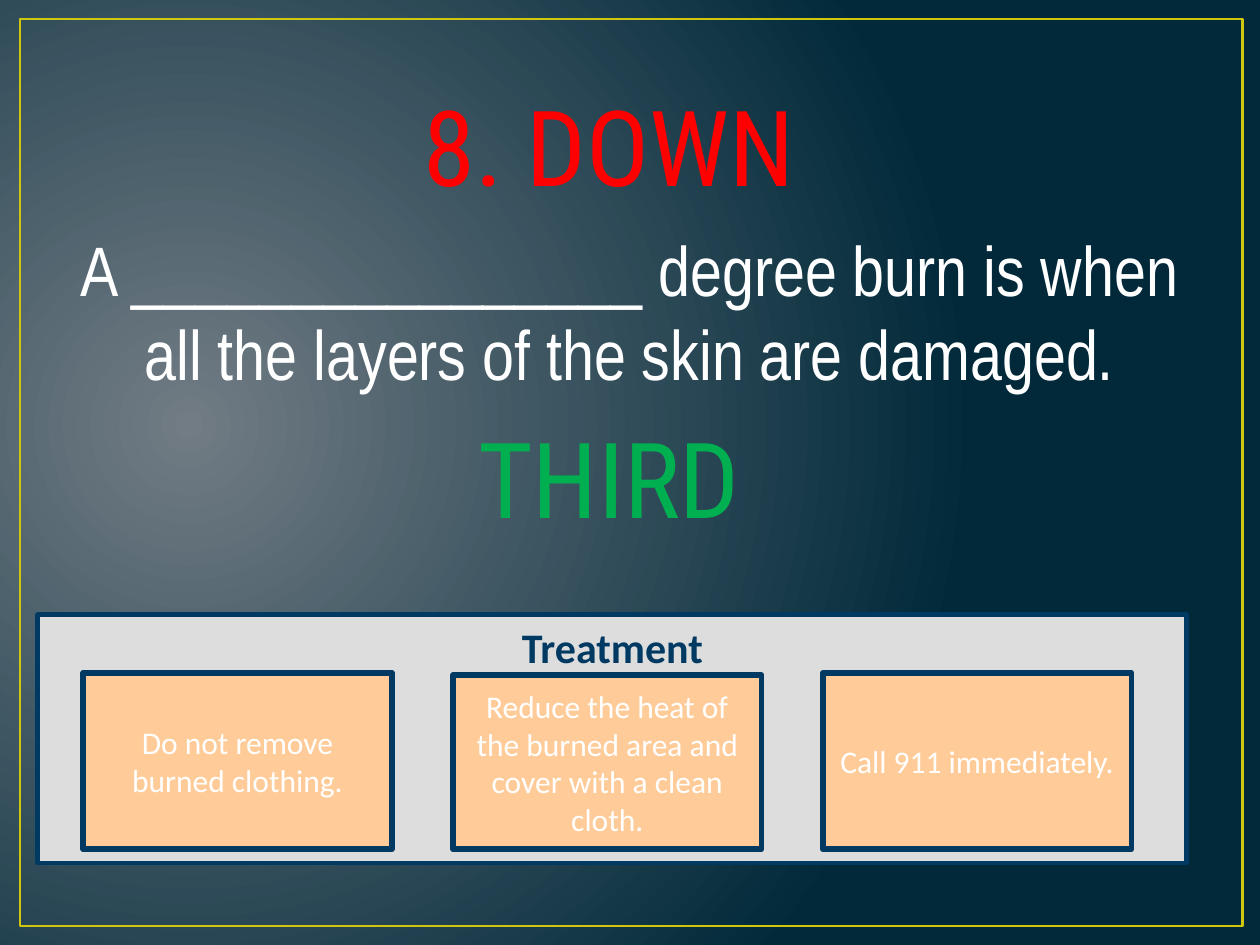
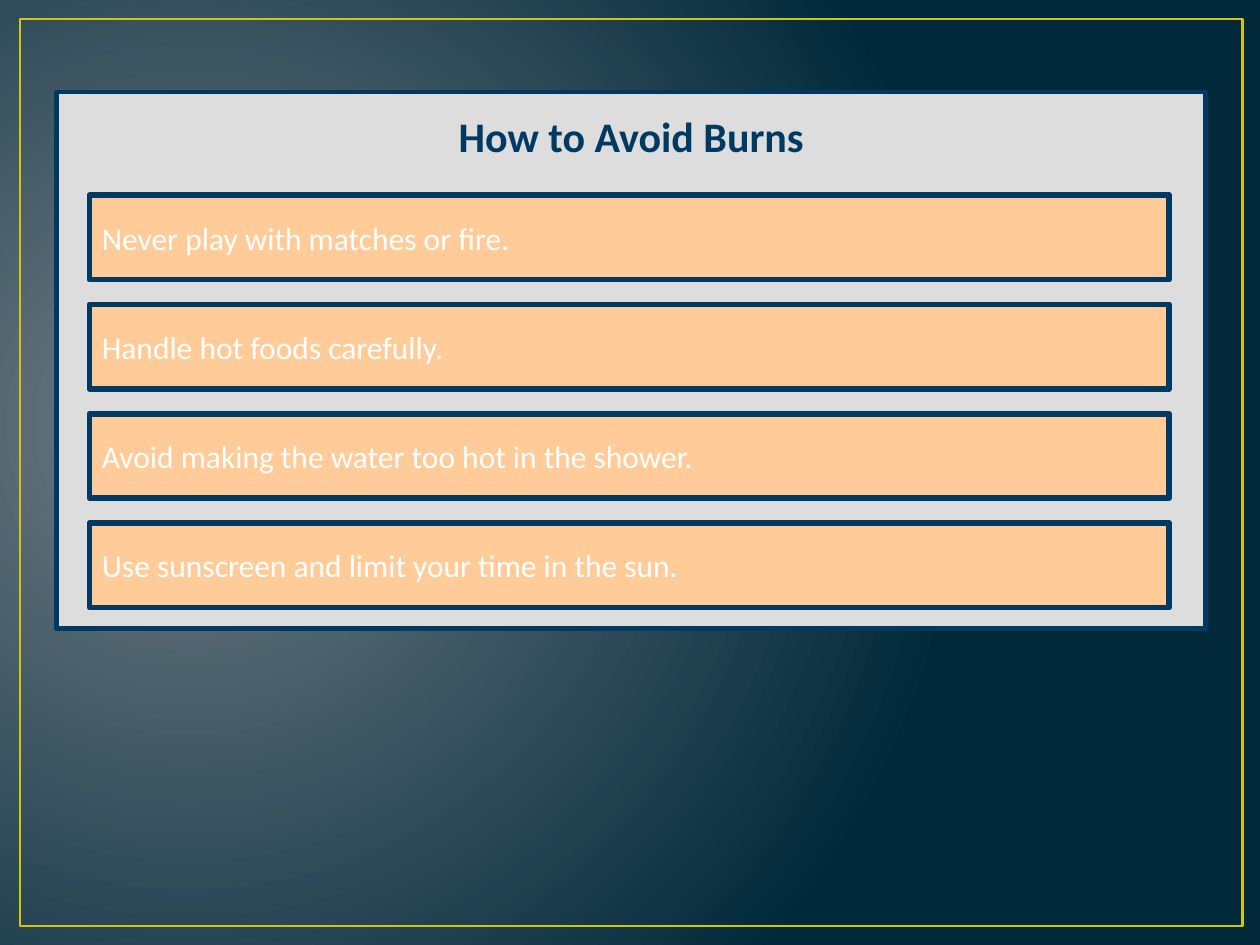
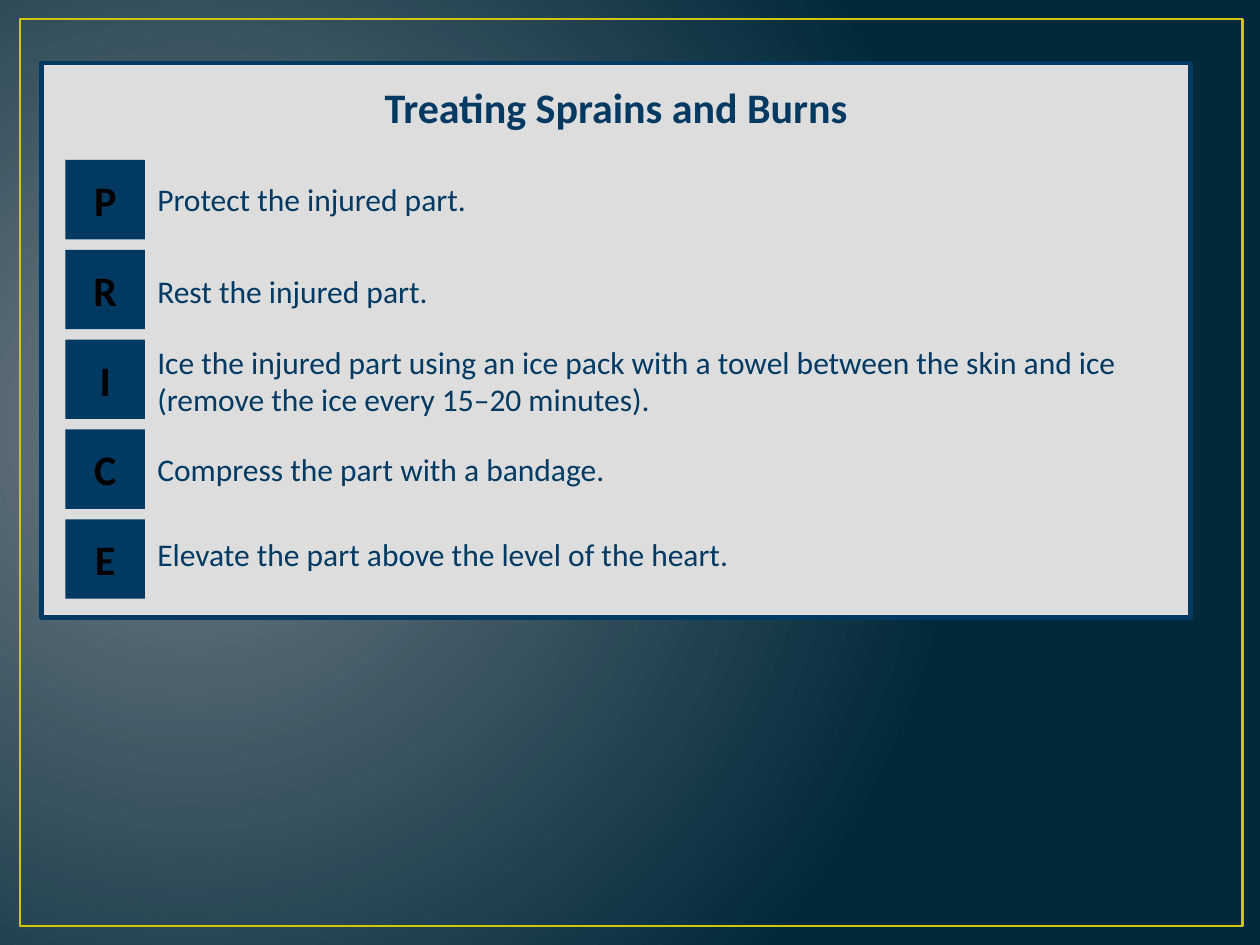
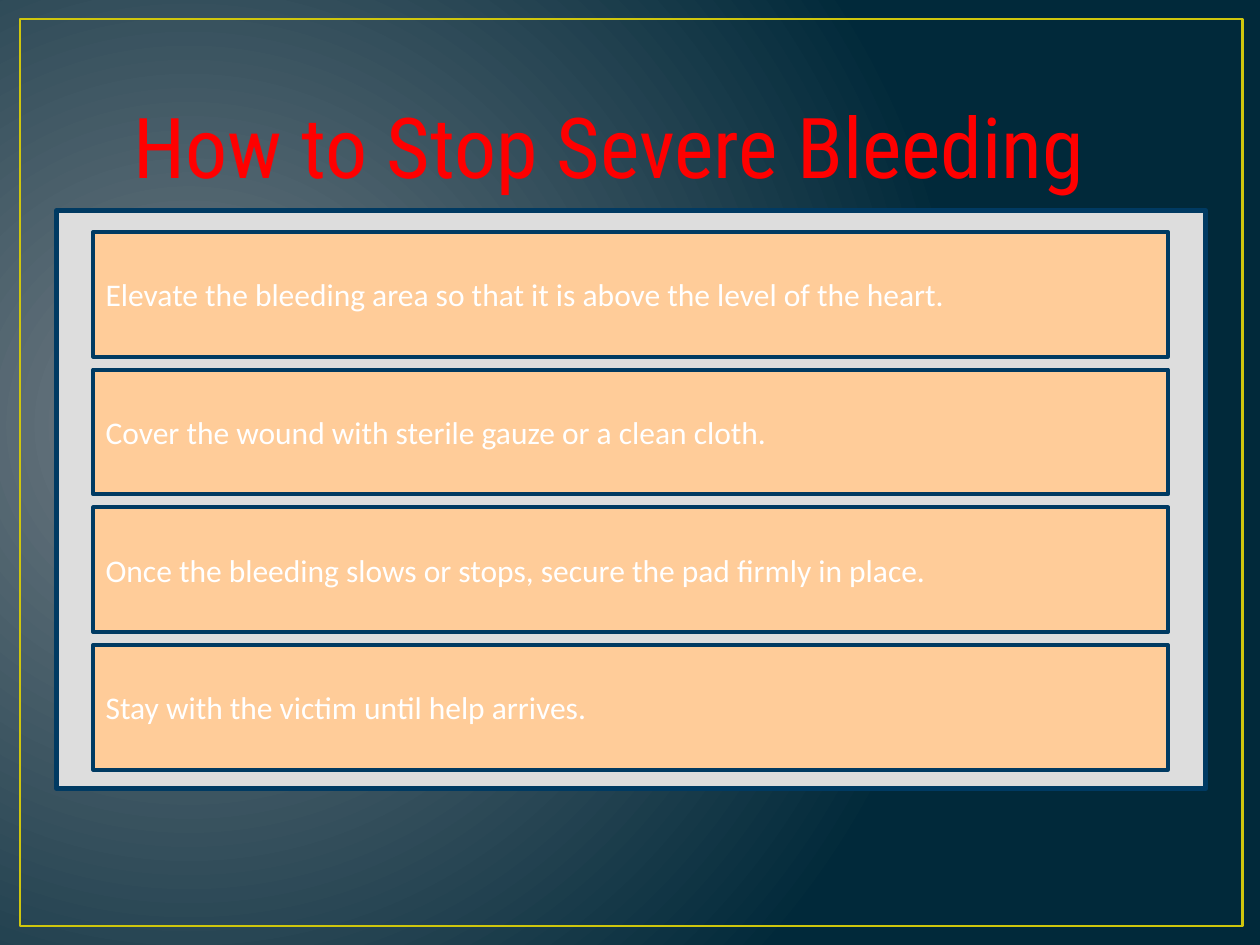
from lxml.etree import SubElement
from pptx import Presentation
from pptx.dml.color import RGBColor
from pptx.enum.shapes import MSO_SHAPE
from pptx.enum.text import MSO_ANCHOR, MSO_AUTO_SIZE, PP_ALIGN
from pptx.oxml.ns import qn
from pptx.util import Inches, Pt

GLOW = RGBColor(0x71, 0x7C, 0x84)
DEEP_BLUE = RGBColor(0x01, 0x29, 0x3A)
GOLD = RGBColor(0xCF, 0xC6, 0x0D)
NAVY = RGBColor(0x00, 0x3A, 0x62)
GRAY = RGBColor(0xDD, 0xDD, 0xDD)
PEACH = RGBColor(0xFF, 0xCC, 0x99)
RED = RGBColor(0xFF, 0x00, 0x00)
GREEN = RGBColor(0x00, 0xB0, 0x50)
WHITE = RGBColor(0xFF, 0xFF, 0xFF)
BLACK = RGBColor(0x00, 0x00, 0x00)

COLUMNS, ROWS = 100, 75
TITLE_AND_BODY, TITLE_ONLY, BLANK = 1, 5, 6
TITLE_AREA = (4.6, 5.9, 87.5, 11.2)
ANSWER_AREA = (4.6, 32.2, 87.5, 11.2)

DISPLAY = {"name": "Roboto Condensed", "size": Pt(60)}
CLUE = {"name": "Arial Narrow", "size": Pt(40)}
HEADING = {"name": "Calibri", "size": Pt(24), "bold": True}
TEXT = {"name": "Calibri", "size": Pt(18)}


def assign(target, values):
    """Set each named attribute of the target."""
    for name, value in values.items():
        setattr(target, name, value)


class Deck:
    """Holds the shared style and the current slide."""

    def __init__(self):
        """Open a presentation with the glowing background."""
        self.presentation = Presentation()
        assign(self.presentation, {"slide_width": Inches(10), "slide_height": Inches(7.5)})
        self.master = self.presentation.slide_master
        self.slide = None
        self.paint_background()

    def paint_background(self):
        """Give the master its circular gradient."""
        fill = self.master.background.fill
        fill.gradient()
        for stop, color in zip(fill.gradient_stops, (GLOW, DEEP_BLUE)):
            stop.color.rgb = color
        gradient = self.master.element.find(".//" + qn("a:gradFill"))
        gradient.remove(gradient.find(qn("a:lin")))
        circle = SubElement(gradient, qn("a:path"), {"path": "circle"})
        SubElement(circle, qn("a:fillToRect"),
                   {"l": "15000", "t": "50000", "r": "85000", "b": "60000"})

    def add_frame(self):
        """Put the gold frame on the master."""
        frame = self.box((1.6, 1.5, 97, 72), None, GOLD, 1.5)
        frame.element.nvSpPr.cNvPr.set("id", "99")
        self.master.shapes.element.append(frame.element)

    def new_slide(self, layout):
        """Start a slide, framing the master the first time."""
        self.slide = self.presentation.slides.add_slide(
            self.presentation.slide_layouts[layout])
        if len(self.presentation.slides) == 1:
            self.add_frame()

    def place(self, area):
        """Turn columns and rows into left, top, width and height."""
        column = self.presentation.slide_width / COLUMNS
        row = self.presentation.slide_height / ROWS
        return [round(length * unit) for length, unit in zip(area, (column, row) * 2)]

    def set_text(self, shape, text, font, color, align=PP_ALIGN.LEFT, **frame_values):
        """Fill a shape with one formatted paragraph."""
        frame = shape.text_frame
        frame.text = text
        assign(frame, {"word_wrap": True, **frame_values})
        paragraph = frame.paragraphs[0]
        paragraph.alignment = align
        run = paragraph.runs[0]
        assign(run.font, font)
        run.font.color.rgb = color
        return paragraph

    def move(self, shape, area):
        """Move a placeholder to an area of the grid."""
        assign(shape, dict(zip(("left", "top", "width", "height"), self.place(area))))

    def title(self, text, size):
        """Fill the title placeholder."""
        shape = self.slide.shapes.title
        self.move(shape, TITLE_AREA)
        self.set_text(shape, text, {**DISPLAY, "size": Pt(size)}, RED, PP_ALIGN.CENTER,
                      vertical_anchor=MSO_ANCHOR.MIDDLE)

    def body(self, text, area):
        """Fill the body placeholder with an unbulleted clue."""
        shape = self.slide.placeholders[1]
        self.move(shape, area)
        paragraph = self.set_text(shape, text, CLUE, WHITE, PP_ALIGN.CENTER,
                                  auto_size=MSO_AUTO_SIZE.SHAPE_TO_FIT_TEXT)
        assign(paragraph, {"level": 1, "space_before": Pt(0)})
        properties = paragraph._p.get_or_add_pPr()
        properties.set("marL", str(Inches(0.5)))
        properties.set("indent", "0")
        SubElement(properties, qn("a:buNone"))

    def label(self, text, area, font, color, align=PP_ALIGN.LEFT, **frame_values):
        """Add a text box."""
        shape = self.slide.shapes.add_textbox(*self.place(area))
        self.set_text(shape, text, font, color, align, **frame_values)

    def box(self, area, fill, line=None, line_width=0):
        """Add a plain rectangle."""
        shape = self.slide.shapes.add_shape(MSO_SHAPE.RECTANGLE, *self.place(area))
        shape.shadow.inherit = False
        for paint, color in ((shape.fill, fill), (shape.line.fill, line)):
            if color is None:
                paint.background()
            else:
                paint.solid()
                paint.fore_color.rgb = color
        if line is not None:
            shape.line.width = Pt(line_width)
        return shape

    def panel(self, area, heading=None, inset=0.15):
        """Add a gray panel with an optional heading at its top."""
        shape = self.box(area, GRAY, NAVY, 2.75)
        if heading:
            self.set_text(shape, heading, HEADING, NAVY, PP_ALIGN.CENTER,
                          vertical_anchor=MSO_ANCHOR.TOP, margin_top=Inches(inset))

    def card(self, text, area, line_width=3.25, align=PP_ALIGN.LEFT):
        """Add a peach card with white text."""
        shape = self.box(area, PEACH, NAVY, line_width)
        self.set_text(shape, text, TEXT, WHITE, align, vertical_anchor=MSO_ANCHOR.MIDDLE)

    def card_column(self, texts, first_area, pitch, line_width):
        """Stack cards at an equal pitch."""
        left, top, width, height = first_area
        for index, text in enumerate(texts):
            self.card(text, (left, top + index * pitch, width, height), line_width)

    def letter(self, text, area):
        """Add a navy square with a bold letter."""
        shape = self.box(area, NAVY)
        self.set_text(shape, text, HEADING, BLACK, PP_ALIGN.CENTER,
                      vertical_anchor=MSO_ANCHOR.MIDDLE)


def add_third_degree_burn(deck):
    """Build the crossword clue with its answer and treatment."""
    deck.new_slide(TITLE_AND_BODY)
    deck.title("8. DOWN", 60)
    deck.body("A ________________ degree burn is when all the layers of the skin are damaged.",
              (-0.7, 17.5, 96.3, 14.5))
    deck.label("THIRD", ANSWER_AREA, DISPLAY, GREEN, PP_ALIGN.CENTER,
               vertical_anchor=MSO_ANCHOR.MIDDLE)
    deck.panel((3, 48.8, 91.2, 19.7), "Treatment", 0.05)
    bottom = 67.4
    treatments = (
        ("Do not remove burned clothing.", 53.4),
        ("Reduce the heat of the burned area and cover with a clean cloth.", 53.6),
        ("Call 911 immediately.", 53.4),
    )
    for index, (text, top) in enumerate(treatments):
        deck.card(text, (6.6 + index * 29.35, top, 24.5, bottom - top), align=PP_ALIGN.CENTER)


def add_avoiding_burns(deck):
    """Build the list of ways to avoid burns."""
    deck.new_slide(BLANK)
    deck.panel((4.5, 7.3, 91.2, 42.6), "How to Avoid Burns")
    deck.card_column((
        "Never play with matches or fire.",
        "Handle hot foods carefully.",
        "Avoid making the water too hot in the shower.",
        "Use sunscreen and limit your time in the sun.",
    ), (7.1, 15.5, 85.7, 6.7), 8.67, 3.25)


def add_price_steps(deck):
    """Build the five lettered treatment steps."""
    deck.new_slide(BLANK)
    deck.panel((3.3, 5, 91.2, 44), "Treating Sprains and Burns")
    steps = (
        ("Protect the injured part.", 13.8, 28, 4),
        ("Rest the injured part.", 21.1, 25.2, 4),
        ("Ice the injured part using an ice pack with a towel between the skin and ice "
         "(remove the ice every 15–20 minutes).", 26.7, 78.8, 7),
        ("Compress the part with a bandage.", 35.2, 78.8, 4),
        ("Elevate the part above the level of the heart.", 42, 78.8, 4),
    )
    for index, (text, top, width, height) in enumerate(steps):
        deck.letter(text[0], (5.2, 12.7 + index * 7.13, 6.3, 6.3))
        deck.label(text, (11.5, top, width, height), TEXT, NAVY,
                   auto_size=MSO_AUTO_SIZE.SHAPE_TO_FIT_TEXT)


def add_stopping_bleeding(deck):
    """Build the steps that stop severe bleeding."""
    deck.new_slide(TITLE_ONLY)
    deck.title("How to Stop Severe Bleeding", 48)
    deck.panel((4.5, 16.7, 91.2, 45.9))
    deck.card_column((
        "Elevate the bleeding area so that it is above the level of the heart.",
        "Cover the wound with sterile gauze or a clean cloth.",
        "Once the bleeding slows or stops, secure the pad firmly in place.",
        "Stay with the victim until help arrives.",
    ), (7.4, 18.4, 85.3, 9.9), 10.93, 2.25)


def main():
    """Build and save the slides."""
    deck = Deck()
    for add_slide in (add_third_degree_burn, add_avoiding_burns,
                      add_price_steps, add_stopping_bleeding):
        add_slide(deck)
    deck.presentation.save("out.pptx")


if __name__ == "__main__":
    main()
